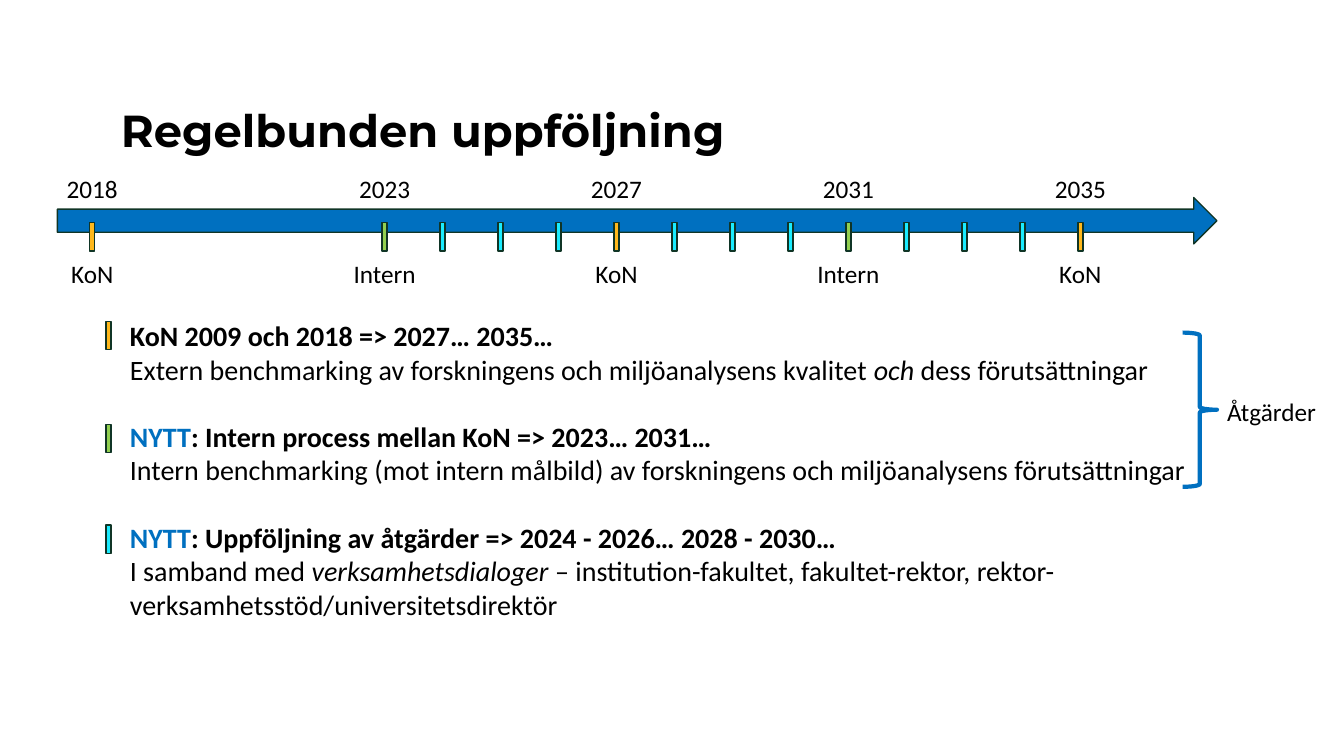
"""Build the follow-up timeline slide."""
import dataclasses

import pptx
import pptx.dml.color
import pptx.enum.shapes
import pptx.enum.text
import pptx.util
from pptx.util import Inches

SHAPE = pptx.enum.shapes.MSO_SHAPE
ALIGN = pptx.enum.text.PP_ALIGN
ANCHOR = pptx.enum.text.MSO_ANCHOR
FIT = pptx.enum.text.MSO_AUTO_SIZE


@dataclasses.dataclass(frozen=True)
class Theme:
    """Hold the colours, fonts and type sizes of the slide."""
    blue: str = "0070C0"
    orange: str = "FFB81C"
    green: str = "92D050"
    cyan: str = "1AECFF"
    outline: str = "103526"
    text: str = "000000"
    body_font: str = "Calibri"
    title_font: str = "Montserrat"
    title_size: int = 32
    body_size: int = 20
    label_size: int = 18


THEME = Theme()
TICK_WIDTH, TICK_HEIGHT = 0.05, 0.28
YEAR_STEP = 0.575
FIRST_YEAR, LAST_YEAR = 2023, 2035
MILESTONES = {
    2018: ("KoN", THEME.orange),
    2023: ("Intern", THEME.green),
    2027: ("KoN", THEME.orange),
    2031: ("Intern", THEME.green),
    2035: ("KoN", THEME.orange),
}
BOLD, ITALIC = {"bold": True}, {"italic": True}
NEW = ("NYTT", {"bold": True, "color": THEME.blue})
ACTIVITIES = [
    (3.19, THEME.orange,
     [("KoN 2009 och 2018 => 2027… 2035…", BOLD)],
     [("Extern benchmarking av forskningens och miljöanalysens kvalitet ", {}),
      ("och", ITALIC), (" dess förutsättningar", {})]),
    (4.21, THEME.green,
     [NEW, (": Intern process mellan KoN => 2023… 2031…", BOLD)],
     [("Intern benchmarking (mot intern målbild) av forskningens och "
       "miljöanalysens förutsättningar", {})]),
    (5.21, THEME.cyan,
     [NEW, (": Uppföljning av åtgärder => 2024 - 2026… 2028 - 2030…", BOLD)],
     [("I samband med ", {}), ("verksamhetsdialoger", ITALIC),
      (" – institution-fakultet, fakultet-rektor, "
       "rektor-verksamhetsstöd/universitetsdirektör", {})]),
]


def rgb(value):
    """Turn a hex string into a colour."""
    return pptx.dml.color.RGBColor.from_string(value)


def apply(target, values):
    """Set every attribute in a dict of format values."""
    for name, value in values.items():
        setattr(target, name, value)


def add_run(paragraph, text, size, name=THEME.body_font, color=THEME.text, **style):
    """Append one formatted run."""
    run = paragraph.add_run()
    run.text = text
    apply(run.font, {"name": name, "size": pptx.util.Pt(size), **style})
    run.font.color.rgb = rgb(color)


def add_preset(shapes, kind, box, fill, line, width=1):
    """Add a preset shape with an outline and an optional fill."""
    shape = shapes.add_shape(kind, *map(Inches, box))
    shape.shadow.inherit = False
    if fill:
        shape.fill.solid()
        shape.fill.fore_color.rgb = rgb(fill)
    else:
        shape.fill.background()
    shape.line.color.rgb = rgb(line)
    shape.line.width = pptx.util.Pt(width)
    return shape


def add_tick(shapes, left, top, fill):
    """Add a small coloured marker."""
    add_preset(shapes, SHAPE.RECTANGLE, (left, top, TICK_WIDTH, TICK_HEIGHT),
               fill, THEME.outline)


def add_text(shapes, box, **frame_format):
    """Add a text box and return its frame."""
    frame = shapes.add_textbox(*map(Inches, box)).text_frame
    apply(frame, frame_format)
    return frame


def add_label(shapes, text, center, top, width):
    """Add a label centred on a tick."""
    frame = add_text(shapes, (center - width / 2, top, width, 0.4),
                     word_wrap=False, auto_size=FIT.SHAPE_TO_FIT_TEXT)
    frame.paragraphs[0].alignment = ALIGN.CENTER
    add_run(frame.paragraphs[0], text, THEME.label_size)


def add_title(slide):
    """Place and format the title."""
    title = slide.shapes.title
    apply(title, {"left": Inches(1.2), "top": Inches(0.6),
                  "width": Inches(11.5), "height": Inches(1.45)})
    apply(title.text_frame, {
        "margin_left": 0, "margin_right": 0, "margin_top": 0,
        "margin_bottom": Inches(0.5), "vertical_anchor": ANCHOR.BOTTOM,
        "word_wrap": True, "auto_size": FIT.NONE})
    paragraph = title.text_frame.paragraphs[0]
    apply(paragraph, {"alignment": ALIGN.LEFT, "line_spacing": pptx.util.Pt(36)})
    add_run(paragraph, "Regelbunden uppföljning", THEME.title_size,
            THEME.title_font, bold=True)


def add_timeline(slide):
    """Draw the arrow with its yearly ticks and milestone labels."""
    shapes = slide.shapes.add_group_shape().shapes
    add_preset(shapes, SHAPE.RIGHT_ARROW, (0.57, 1.96, 11.5, 0.46),
               THEME.blue, THEME.outline)
    lefts = {2018: 0.89}
    for year in range(FIRST_YEAR, LAST_YEAR + 1):
        lefts[year] = 3.79 + (year - FIRST_YEAR) * YEAR_STEP
    for year, left in lefts.items():
        name, fill = MILESTONES.get(year, (None, THEME.cyan))
        add_tick(shapes, left, 2.21, fill)
        if name:
            center = left + TICK_WIDTH / 2
            add_label(shapes, str(year), center, 1.67, 0.71)
            add_label(shapes, name, center, 2.51, 0.82 if name == "Intern" else 0.63)


def add_activities(slide):
    """Write the activities with their colour keys."""
    frame = add_text(slide.shapes, (1.19, 3.11, 10.94, 4.07),
                     word_wrap=True, auto_size=FIT.NONE)
    for index, (top, fill, heading, detail) in enumerate(ACTIVITIES):
        add_tick(slide.shapes, 1.05, top, fill)
        first = frame.add_paragraph() if index else frame.paragraphs[0]
        if index:
            first.space_before = pptx.util.Pt(24)
        for paragraph, runs in ((first, heading), (frame.add_paragraph(), detail)):
            for text, style in runs:
                add_run(paragraph, text, THEME.body_size, **style)


def add_measures(slide):
    """Add the brace and its caption."""
    add_preset(slide.shapes, SHAPE.RIGHT_BRACE, (11.73, 3.3, 0.34, 1.53),
               None, THEME.blue, 3)
    frame = add_text(slide.shapes, (12.17, 3.93, 1, 1), word_wrap=False,
                     margin_left=0, margin_right=0, margin_top=0, margin_bottom=0)
    add_run(frame.paragraphs[0], "Åtgärder", THEME.label_size)


def main():
    """Build and save the presentation."""
    presentation = pptx.Presentation()
    apply(presentation, {"slide_width": Inches(13.33), "slide_height": Inches(7.5)})
    slide = presentation.slides.add_slide(presentation.slide_layouts[5])
    add_title(slide)
    add_timeline(slide)
    add_activities(slide)
    add_measures(slide)
    presentation.save("out.pptx")


if __name__ == "__main__":
    main()
